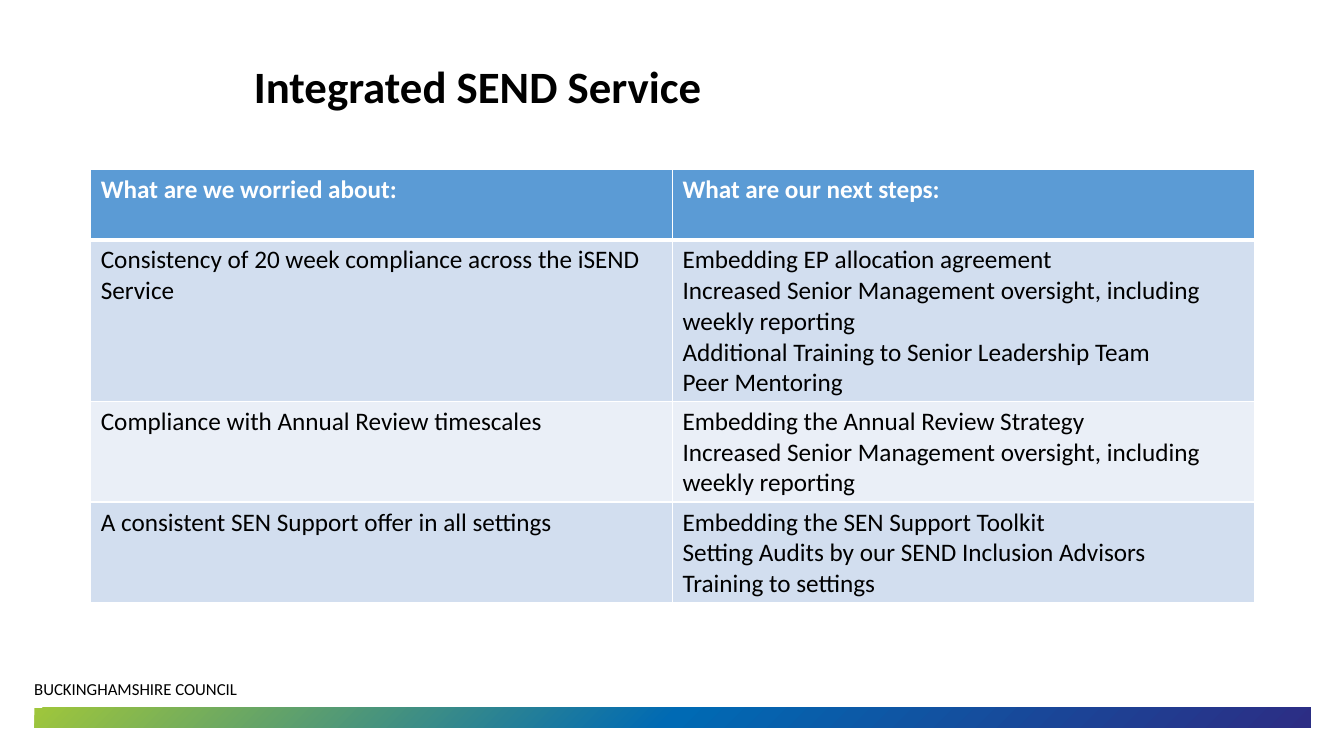
"""Build the Integrated SEND Service slide with its table of worries and next steps."""
from lxml import etree
from pptx import Presentation
from pptx.dml.color import RGBColor
from pptx.enum.shapes import MSO_SHAPE
from pptx.oxml import parse_xml
from pptx.oxml.ns import nsdecls, qn
from pptx.util import Inches, Pt

COLORS = {
    "black": "000000", "white": "FFFFFF", "header": "5B9BD5",
    "dark_band": "D2DEEF", "light_band": "EAEFF7",
    "purple": "2C2D84", "blue": "006AB4", "green": "9FC63B",
}
FONT = "Calibri"


def add_run(p, text, size, color="black", bold=False):
    r = p.add_run()
    r.text = text
    r.font.name = FONT
    r.font.size = Pt(size)
    r.font.bold = bold
    r.font.color.rgb = RGBColor.from_string(COLORS[color])


def add_border(cell, side, width):
    ln = etree.SubElement(cell._tc.get_or_add_tcPr(), qn(f"a:ln{side}"), w=str(Pt(width)))
    fill = etree.SubElement(ln, qn("a:solidFill"))
    etree.SubElement(fill, qn("a:srgbClr"), val=COLORS["white"])


prs = Presentation()
prs.slide_width, prs.slide_height = Inches(13.33), Inches(7.5)
s = prs.slides.add_slide(prs.slide_layouts[6])

bar = s.shapes.add_shape(MSO_SHAPE.RECTANGLE, Inches(0.34), Inches(7.02), Inches(12.66), Inches(0.2))
bar.shadow.inherit = False
bar.line.fill.background()
stops = "".join(
    f'<a:gs pos="{pos * 1000}"><a:srgbClr val="{COLORS[name]}"/></a:gs>'
    for pos, name in ((0, "purple"), (50, "blue"), (100, "green"))
)
gradient = parse_xml(
    f'<a:gradFill {nsdecls("a")}><a:gsLst>{stops}</a:gsLst>'
    '<a:path path="circle"><a:fillToRect l="100000" t="100000"/></a:path></a:gradFill>'
)
spPr = bar._element.spPr
spPr.find(qn("a:prstGeom")).addnext(gradient)
spPr.find(qn("a:xfrm")).set("flipH", "1")

for text, left, top, width, height, size, bold in (
    ("BUCKINGHAMSHIRE COUNCIL", 0.24, 6.68, 6.41, 0.3, 12, False),
    ("Integrated SEND Service", 2.42, 0.53, 6.67, 0.64, 32, True),
):
    box = s.shapes.add_textbox(Inches(left), Inches(top), Inches(width), Inches(height))
    tf = box.text_frame
    tf.word_wrap = True
    add_run(tf.paragraphs[0], text, size, bold=bold)

rows = [
    (["What are we worried about:"], ["What are our next steps:"]),
    (["Consistency of 20 week compliance across the iSEND Service"],
     ["Embedding EP allocation agreement",
      "Increased Senior Management oversight, including weekly reporting",
      "Additional Training to Senior Leadership Team",
      "Peer Mentoring"]),
    (["Compliance with Annual Review timescales"],
     ["Embedding the Annual Review Strategy",
      "Increased Senior Management oversight, including weekly reporting"]),
    (["A consistent SEN Support offer in all settings"],
     ["Embedding the SEN Support Toolkit",
      "Setting Audits by our SEND Inclusion Advisors",
      "Training to settings"]),
]
row_heights = [0.7, 1.6, 1, 1]
bands = ["header", "dark_band", "light_band", "dark_band"]

table = s.shapes.add_table(
    len(rows), 2, Inches(0.9), Inches(1.68), Inches(11.54), Inches(sum(row_heights))
).table
for column in table.columns:
    column.width = Inches(5.77)

for i, (row, height, band) in enumerate(zip(rows, row_heights, bands)):
    table.rows[i].height = Inches(height)
    is_header = i == 0
    for j, lines in enumerate(row):
        cell = table.cell(i, j)
        for side in "LRTB":
            under_header = (i, side) in ((0, "B"), (1, "T"))
            add_border(cell, side, 3 if under_header else 1)
        cell.fill.solid()
        cell.fill.fore_color.rgb = RGBColor.from_string(COLORS[band])
        tf = cell.text_frame
        for k, line in enumerate(lines):
            p = tf.add_paragraph() if k else tf.paragraphs[0]
            add_run(p, line, 18, "white" if is_header else "black", is_header)

prs.save("out.pptx")
